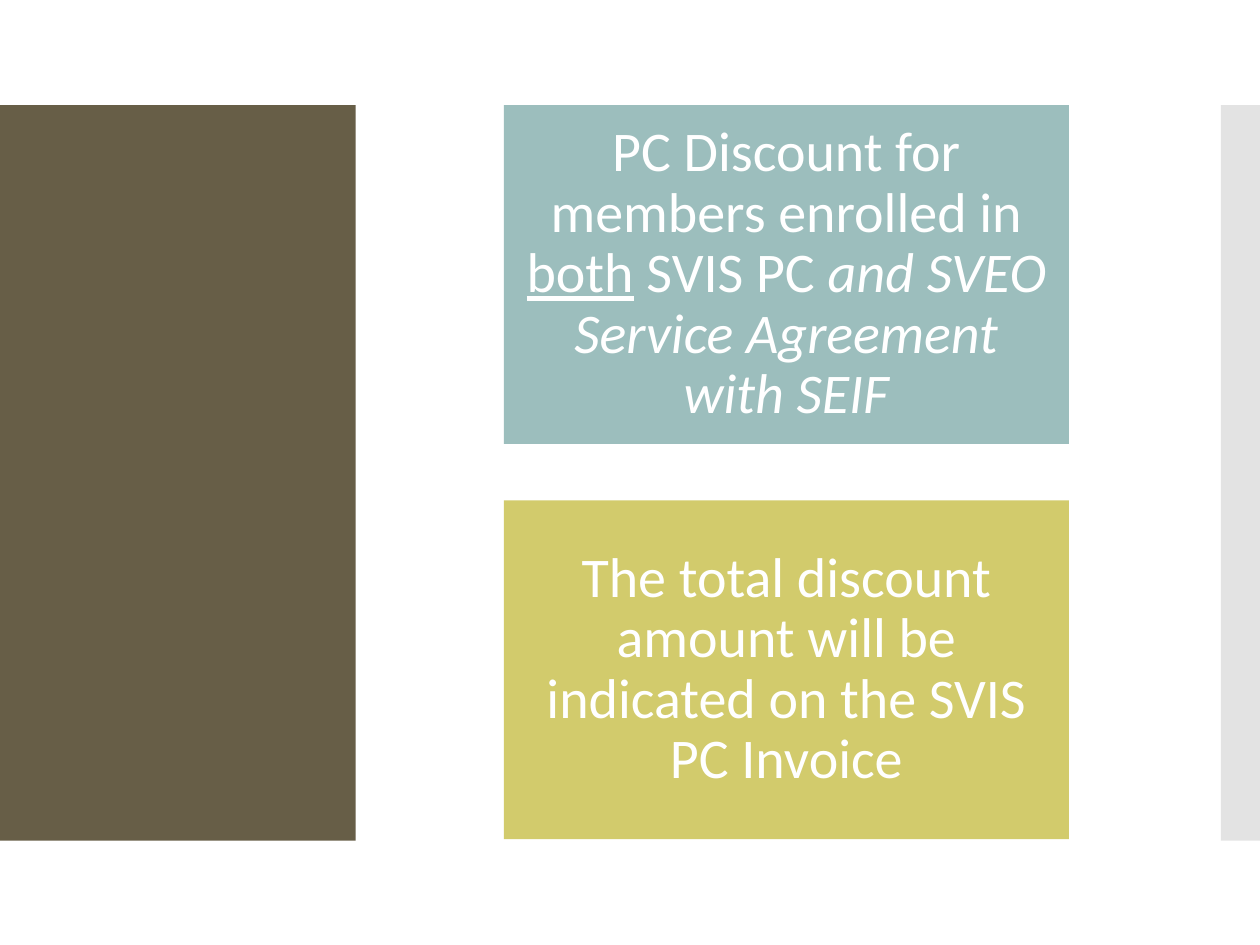
from dataclasses import dataclass

from lxml.etree import SubElement
from pptx import Presentation
from pptx.dml.color import RGBColor
from pptx.enum.shapes import MSO_SHAPE
from pptx.enum.text import MSO_ANCHOR, PP_ALIGN
from pptx.oxml.ns import qn
from pptx.shapes.autoshape import Shape
from pptx.slide import Slide
from pptx.util import Cm, Pt


@dataclass(frozen=True)
class Theme:
    olive: str = "675E47"
    grey: str = "C8C8C8"
    teal: str = "9CBEBD"
    lime: str = "D2CB6C"
    text: str = "FFFFFF"
    font: str = "Calibri"
    card_size: int = 32


@dataclass(frozen=True)
class Panel:
    left: float
    top: float
    width: float
    height: float
    color: str
    opacity: int = 100


@dataclass(frozen=True)
class TextRun:
    text: str
    underline: bool = False
    italic: bool = False


@dataclass(frozen=True)
class Card:
    color: str
    runs: tuple[TextRun, ...]


THEME = Theme()
SLIDE_WIDTH, SLIDE_HEIGHT = 25.4, 19.05
TOP = 2.12
SIDE_HEIGHT = 14.83
RIGHT_EDGE = 24.61
CARD_LEFT, CARD_WIDTH, CARD_HEIGHT = 10.16, 11.39, 6.83
CARD_GAP = 1.14
CARD_INSET = 0.33

SIDE_PANELS = (
    Panel(RIGHT_EDGE, TOP, SLIDE_WIDTH - RIGHT_EDGE, SIDE_HEIGHT, THEME.grey, 50),
    Panel(0, TOP, 7.17, SIDE_HEIGHT, THEME.olive),
)

CARDS = (
    Card(THEME.teal, (
        TextRun("PC Discount for members enrolled in "),
        TextRun("both", underline=True),
        TextRun(" SVIS PC"),
        TextRun(" and SVEO Service Agreement with SEIF", italic=True),
    )),
    Card(THEME.lime, (
        TextRun("The total discount amount will be indicated on the SVIS PC Invoice"),
    )),
)


def draw_panel(slide: Slide, panel: Panel) -> Shape:
    shape = slide.shapes.add_shape(
        MSO_SHAPE.RECTANGLE,
        Cm(panel.left), Cm(panel.top), Cm(panel.width), Cm(panel.height),
    )
    shape.shadow.inherit = False
    shape.line.fill.background()
    shape.fill.solid()
    shape.fill.fore_color.rgb = RGBColor.from_string(panel.color)
    if panel.opacity < 100:
        color = shape.fill._xPr.find(qn("a:solidFill"))[0]
        SubElement(color, qn("a:alpha"), val=str(panel.opacity * 1000))
    return shape


def draw_card(slide: Slide, card: Card, top: float) -> None:
    shape = draw_panel(
        slide, Panel(CARD_LEFT, top, CARD_WIDTH, CARD_HEIGHT, card.color)
    )
    frame = shape.text_frame
    frame.word_wrap = True
    frame.vertical_anchor = MSO_ANCHOR.MIDDLE
    frame.margin_left = frame.margin_right = Cm(CARD_INSET)
    frame.margin_top = frame.margin_bottom = Cm(CARD_INSET)
    paragraph = frame.paragraphs[0]
    paragraph.alignment = PP_ALIGN.CENTER
    paragraph.line_spacing = 0.9
    for text_run in card.runs:
        run = paragraph.add_run()
        run.text = text_run.text
        run.font.name = THEME.font
        run.font.size = Pt(THEME.card_size)
        run.font.color.rgb = RGBColor.from_string(THEME.text)
        run.font.underline = text_run.underline
        run.font.italic = text_run.italic


def main() -> None:
    presentation = Presentation()
    presentation.slide_width = Cm(SLIDE_WIDTH)
    presentation.slide_height = Cm(SLIDE_HEIGHT)
    slide = presentation.slides.add_slide(presentation.slide_layouts[6])
    for panel in SIDE_PANELS:
        draw_panel(slide, panel)
    for index, card in enumerate(CARDS):
        draw_card(slide, card, TOP + index * (CARD_HEIGHT + CARD_GAP))
    presentation.save("out.pptx")


if __name__ == "__main__":
    main()
